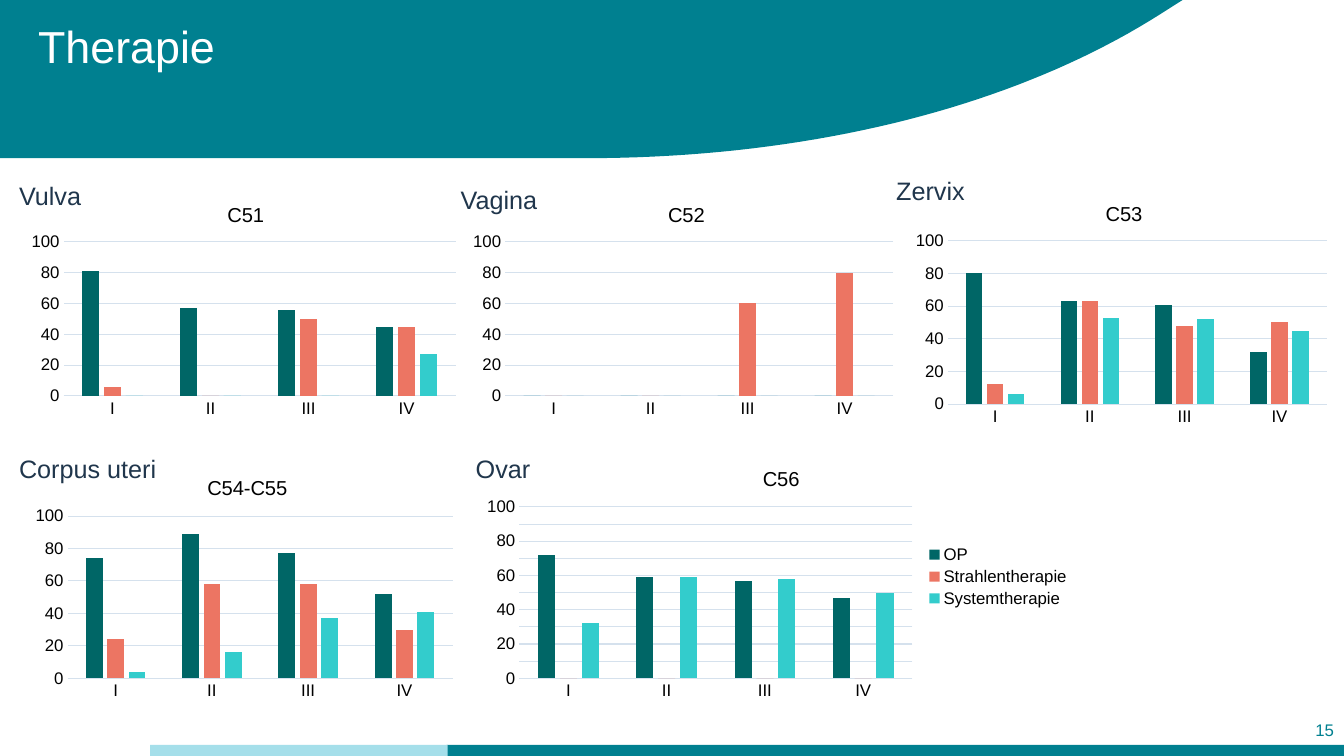
from dataclasses import dataclass

import pptx
import pptx.chart.data
import pptx.dml.color
import pptx.enum.chart
import pptx.enum.shapes
import pptx.enum.text
import pptx.oxml
import pptx.util
from pptx.util import Inches


@dataclass(frozen=True)
class Theme:
    font: str = "Arial"
    teal: str = "008090"
    pale_teal: str = "A5DFEA"
    white: str = "FFFFFF"
    navy: str = "20364C"
    black: str = "000000"
    grid: str = "D5E1ED"
    bars: tuple = ("006666", "EC7563", "33CCCC")
    bars_vagina: tuple = ("008090", "EC7563", "79B3BF")
    title_size: float = 32
    label_size: float = 18
    chart_title_size: float = 14.4
    small_size: float = 12


theme = Theme()
STAGES = ["I", "II", "III", "IV"]
TREATMENTS = ["OP", "Strahlentherapie", "Systemtherapie"]


def style_font(font, size, color):
    font.name = theme.font
    font.size = pptx.util.Pt(size)
    font.color.rgb = pptx.dml.color.RGBColor.from_string(color)


def place_in_chart(element, frame, left, top, size=None):
    """Pin a title or the inner plot area, in slide inches, within its chart frame."""
    frame_left, frame_top, frame_width, frame_height = frame
    parts = {"x": (left - frame_left) / frame_width, "y": (top - frame_top) / frame_height}
    if size:
        parts.update(w=size[0] / frame_width, h=size[1] / frame_height)
    target = '<c:layoutTarget val="inner"/>' if size else ""
    modes = "".join(f'<c:{key}Mode val="edge"/>' for key in ("x", "y"))
    values = "".join(f'<c:{key} val="{value:.4f}"/>' for key, value in parts.items())
    namespace = "http://schemas.openxmlformats.org/drawingml/2006/chart"
    for layout in element.findall(f"{{{namespace}}}layout"):
        element.remove(layout)
    layout = pptx.oxml.parse_xml(
        f'<c:layout xmlns:c="{namespace}"><c:manualLayout>{target}{modes}{values}'
        "</c:manualLayout></c:layout>")
    text = element.find(f"{{{namespace}}}tx")
    if text is None:
        element.insert(0, layout)
    else:
        text.addnext(layout)


deck = pptx.Presentation()
deck.slide_width, deck.slide_height = Inches(13.33), Inches(7.5)
page = deck.slides.add_slide(deck.slide_layouts[6])

# Header with curved edge, and footer bars
curve = [(11.51, 0.14), (10.11, 1.03), (8.12, 1.57), (5.79, 1.57)]
edge = []
for step in range(41):
    t = step / 40
    weights = ((1 - t) ** 3, 3 * t * (1 - t) ** 2, 3 * t ** 2 * (1 - t), t ** 3)
    edge.append(tuple(Inches(sum(w * point[axis] for w, point in zip(weights, curve)))
                      for axis in (0, 1)))
outline = page.shapes.build_freeform(0, 0)
outline.add_line_segments([(Inches(11.73), 0), *edge, (0, Inches(1.57))], close=True)
header = outline.convert_to_shape()

rectangle = pptx.enum.shapes.MSO_SHAPE.RECTANGLE
footer_dark, footer_pale = [
    page.shapes.add_shape(rectangle, Inches(left), Inches(7.39), Inches(width), Inches(0.11))
    for left, width in ((4.43, 8.9), (1.49, 2.95))]
for shape, color in ((header, theme.teal), (footer_dark, theme.teal),
                     (footer_pale, theme.pale_teal)):
    shape.shadow.inherit = False
    shape.fill.solid()
    shape.fill.fore_color.rgb = pptx.dml.color.RGBColor.from_string(color)
    shape.line.fill.background()

# Texts: wording, left, top, width, height, size, colour
texts = [
    ("15", 12.59, 7.04, 0.74, 0.4, theme.small_size, theme.teal),
    ("Therapie", 0.28, 0.2, 7.14, 1.18, theme.title_size, theme.white),
]
for wording, left, top, width in (
        ("Vulva", 0.09, 1.74, 0.82), ("Vagina", 4.47, 1.78, 0.97), ("Zervix", 8.79, 1.69, 0.89),
        ("Corpus uteri", 0.09, 4.45, 1.58), ("Ovar", 4.62, 4.45, 0.75)):
    texts.append((wording, left, top, width, 0.4, theme.label_size, theme.navy))

for wording, left, top, width, height, size, color in texts:
    box = page.shapes.add_textbox(Inches(left), Inches(top), Inches(width), Inches(height))
    box.text_frame.word_wrap = size != theme.label_size
    para = box.text_frame.paragraphs[0]
    para.text = wording
    style_font(para.font, size, color)
    if size == theme.title_size:
        para.line_spacing = 0.9
    elif size == theme.small_size:
        para.alignment = pptx.enum.text.PP_ALIGN.RIGHT
        box.text_frame.vertical_anchor = pptx.enum.text.MSO_ANCHOR.MIDDLE

# Charts: title, frame, title corner, plot area, values per treatment, bar colours
charts = [
    ("C51", (0.22, 1.83, 4.37, 2.36), (2.22, 1.97), (0.63, 2.4, 3.89, 1.53),
     [(81, 57, 56, 45), (6, 0, 50, 45), (0, 0, 0, 27)], theme.bars),
    ("C52", (4.61, 1.83, 4.33, 2.36), (6.59, 1.97), (5.01, 2.4, 3.85, 1.53),
     [(0, 0, 0, 0), (0, 0, 60, 80), (0, 0, 0, 0)], theme.bars_vagina),
    ("C53", (8.99, 1.82, 4.25, 2.46), (10.93, 1.96), (9.4, 2.39, 3.76, 1.62),
     [(80, 63, 61, 32), (12, 63, 48, 50), (6, 53, 52, 45)], theme.bars),
    ("C56", (4.71, 4.45, 6.01, 2.54), (7.53, 4.59), (5.15, 5.03, 3.9, 1.7),
     [(72, 59, 57, 47), (0, 0, 0, 0), (32, 59, 58, 50)], theme.bars),
    ("C54-C55", (0.28, 4.53, 4.29, 2.46), (2.02, 4.68), (0.67, 5.12, 3.82, 1.61),
     [(74, 89, 77, 52), (24, 58, 58, 30), (4, 16, 37, 41)], theme.bars),
]
for title, frame, title_corner, plot_area, values, colors in charts:
    data = pptx.chart.data.CategoryChartData()
    data.categories = STAGES
    for treatment, shares in zip(TREATMENTS, values):
        data.add_series(treatment, shares)
    chart = page.shapes.add_chart(pptx.enum.chart.XL_CHART_TYPE.COLUMN_CLUSTERED,
                                  *map(Inches, frame), data).chart
    style_font(chart.font, theme.small_size, theme.black)

    chart.has_title = True
    para = chart.chart_title.text_frame.paragraphs[0]
    para.text = title
    style_font(para.font, theme.chart_title_size, theme.black)
    para.font.bold = False
    chart.chart_title.include_in_layout = False
    place_in_chart(chart.chart_title._element, frame, *title_corner)

    plot = chart.plots[0]
    plot.gap_width, plot.overlap, plot.vary_by_categories = 219, -27, False
    for series, color in zip(plot.series, colors):
        series.format.fill.solid()
        series.format.fill.fore_color.rgb = pptx.dml.color.RGBColor.from_string(color)
    left, top, width, height = plot_area
    place_in_chart(chart._chartSpace.chart.plotArea, frame, left, top, (width, height))

    shares_axis, stage_axis = chart.value_axis, chart.category_axis
    shares_axis.minimum_scale, shares_axis.maximum_scale = 0, 100
    shares_axis.major_unit = 10 if title == "C56" else 20
    shares_axis.format.line.fill.background()
    for axis in (shares_axis, stage_axis):
        axis.major_tick_mark = pptx.enum.chart.XL_TICK_MARK.NONE
        style_font(axis.tick_labels.font, theme.small_size, theme.black)
    for line in (shares_axis.major_gridlines.format.line, stage_axis.format.line):
        line.color.rgb = pptx.dml.color.RGBColor.from_string(theme.grid)
        line.width = pptx.util.Pt(0.75)

    chart.has_legend = title == "C56"
    if chart.has_legend:
        chart.legend.position = pptx.enum.chart.XL_LEGEND_POSITION.RIGHT
        chart.legend.include_in_layout = False
        style_font(chart.legend.font, theme.small_size, theme.black)

deck.save("out.pptx")
